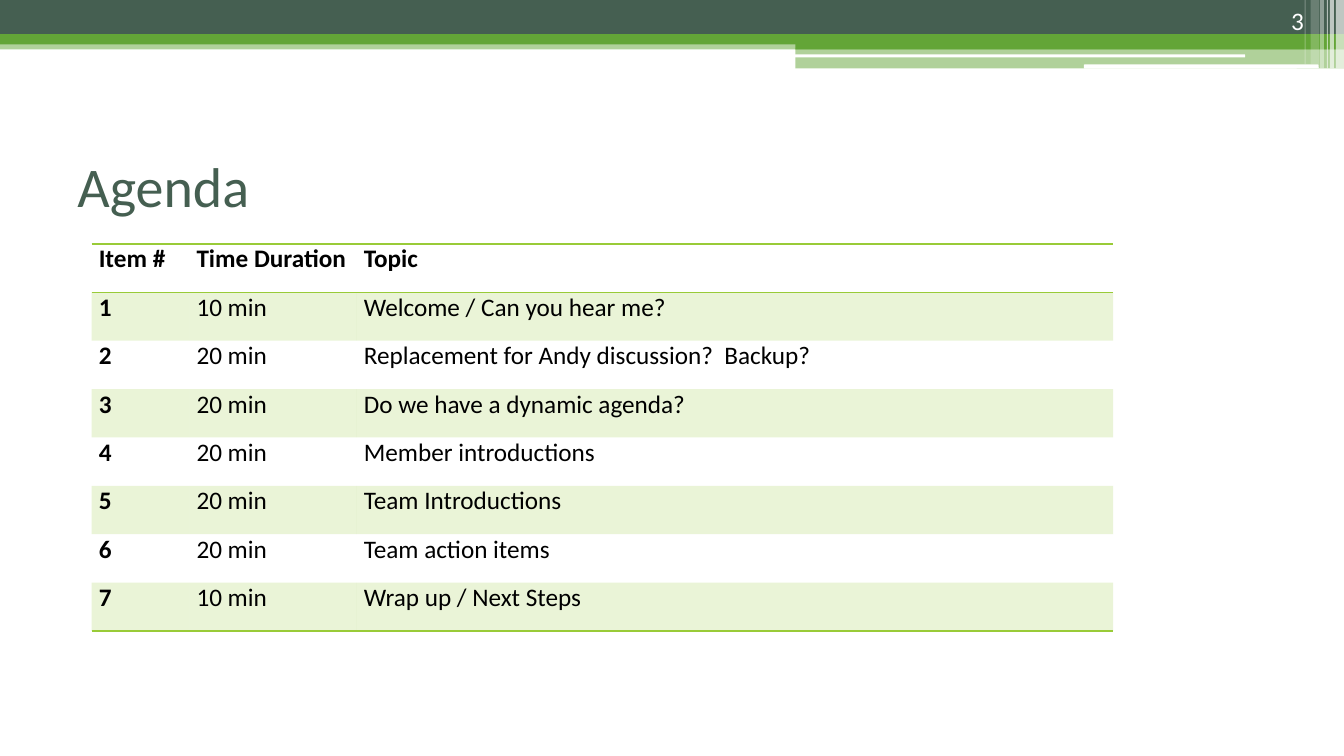
import dataclasses

import lxml.etree
import pptx
import pptx.dml.color
import pptx.enum.shapes
import pptx.enum.text
import pptx.oxml.ns
import pptx.util

Inches = pptx.util.Inches
Align = pptx.enum.text.PP_ALIGN
Anchor = pptx.enum.text.MSO_ANCHOR
Preset = pptx.enum.shapes.MSO_SHAPE
qn = pptx.oxml.ns.qn


@dataclasses.dataclass(frozen=True)
class Theme:
    font: str = "Calibri"
    title_size: int = 40
    body_size: int = 18
    dark: str = "455F51"
    green: str = "63A537"
    lime: str = "99CB38"
    white: str = "FFFFFF"
    black: str = "000000"


NO_TABLE_STYLE = "{2D5ABB26-0587-4C30-8999-92F81FD0307C}"
COLUMN_WIDTHS = (0.97, 1.66, 7.5)
ROW_HEIGHT = 0.48
AGENDA = (
    ("Item #", "Time Duration", "Topic"),
    ("1", "10 min", "Welcome / Can you hear me?"),
    ("2", "20 min", "Replacement for Andy discussion?  Backup?"),
    ("3", "20 min", "Do we have a dynamic agenda?"),
    ("4", "20 min", "Member introductions"),
    ("5", "20 min", "Team Introductions"),
    ("6", "20 min", "Team action items"),
    ("7", "10 min", "Wrap up / Next Steps"),
)
# left, width, height, opacity in percent
EDGE_STRIPES = (
    (13.25, 0.08, 0.68, 65),
    (13.19, 0.04, 0.68, 65),
    (13.16, 0.01, 0.68, 60),
    (13.09, 0.04, 0.68, 40),
    (13, 0.08, 0.64, 20),
    (12.94, 0.01, 0.64, 30),
)


class SlideBuilder:
    def __init__(self, slide, theme):
        self.slide = slide
        self.theme = theme

    def fill(self, target, properties, color, opacity=100):
        """Fill a shape or cell; properties is its XML element that holds the fill."""
        target.fill.solid()
        target.fill.fore_color.rgb = pptx.dml.color.RGBColor.from_string(color)
        if opacity < 100:
            color_element = properties.find(qn("a:solidFill"))[0]
            alpha = lxml.etree.SubElement(color_element, qn("a:alpha"))
            alpha.set("val", str(opacity * 1000))

    def bar(self, left, top, width, height, color, opacity=100, preset=Preset.RECTANGLE):
        shape = self.slide.shapes.add_shape(
            preset, Inches(left), Inches(top), Inches(width), Inches(height))
        shape.shadow.inherit = False
        shape.line.fill.background()
        self.fill(shape, shape._element.spPr, color, opacity)

    def set_text(self, text_frame, text, size, color, bold=False, align=Align.LEFT):
        text_frame.text = text
        paragraph = text_frame.paragraphs[0]
        paragraph.alignment = align
        for run in paragraph.runs:
            run.font.name = self.theme.font
            run.font.size = pptx.util.Pt(size)
            run.font.bold = bold
            run.font.color.rgb = pptx.dml.color.RGBColor.from_string(color)

    def text(self, left, top, width, height, text, size, color, anchor, align=Align.LEFT):
        box = self.slide.shapes.add_textbox(
            Inches(left), Inches(top), Inches(width), Inches(height))
        box.text_frame.word_wrap = True
        box.text_frame.vertical_anchor = anchor
        self.set_text(box.text_frame, text, size, color, align=align)

    def border(self, cell, sides):
        """Draw 1 pt lines on the given sides, named in schema order (lnT, lnB)."""
        for index, side in enumerate(sides):
            line = lxml.etree.Element(qn(f"a:{side}"), w=str(pptx.util.Pt(1)))
            solid = lxml.etree.SubElement(line, qn("a:solidFill"))
            lxml.etree.SubElement(solid, qn("a:srgbClr"), val=self.theme.lime)
            cell._tc.get_or_add_tcPr().insert(index, line)

    def table(self, left, top, rows, widths, row_height):
        frame = self.slide.shapes.add_table(
            len(rows), len(widths), Inches(left), Inches(top),
            Inches(sum(widths)), Inches(row_height * len(rows)))
        table = frame.table
        table._tbl.tblPr.find(qn("a:tableStyleId")).text = NO_TABLE_STYLE
        for column, width in zip(table.columns, widths):
            column.width = Inches(width)
        for row_index, values in enumerate(rows):
            table.rows[row_index].height = Inches(row_height)
            for column_index, value in enumerate(values):
                cell = table.cell(row_index, column_index)
                cell.margin_left = cell.margin_right = Inches(0.07)
                cell.margin_top = cell.margin_bottom = 0
                self.set_text(cell.text_frame, value, self.theme.body_size, self.theme.black,
                              bold=row_index == 0 or column_index == 0)
                if row_index % 2:
                    self.fill(cell, cell._tc.get_or_add_tcPr(), self.theme.lime, 20)
                else:
                    cell.fill.background()
                if row_index == 0:
                    self.border(cell, ("lnT", "lnB"))
                elif row_index == len(rows) - 1:
                    self.border(cell, ("lnB",))


def main():
    presentation = pptx.Presentation()
    presentation.slide_width = Inches(13.33)
    presentation.slide_height = Inches(7.5)
    theme = Theme()
    builder = SlideBuilder(
        presentation.slides.add_slide(presentation.slide_layouts[6]), theme)

    builder.bar(0, 0.4, 13.33, 0.09, theme.green, 50)
    builder.bar(0, 0, 13.33, 0.34, theme.dark)
    builder.bar(0, 0.34, 13.33, 0.1, theme.green)
    builder.bar(7.89, 0.39, 5.44, 0.1, theme.green)
    builder.bar(7.89, 0.48, 5.44, 0.2, theme.green, 50)
    builder.bar(7.88, 0.54, 4.47, 0.03, theme.white, preset=Preset.ROUNDED_RECTANGLE)
    builder.bar(10.75, 0.64, 2.33, 0.04, theme.white, preset=Preset.ROUNDED_RECTANGLE)
    for left, width, height, opacity in EDGE_STRIPES:
        builder.bar(left, 0, width, height, theme.white, opacity)

    builder.text(0.67, 1.25, 12, 1.17, "Agenda", theme.title_size, theme.dark, Anchor.MIDDLE)
    builder.table(0.91, 2.42, AGENDA, COLUMN_WIDTHS, ROW_HEIGHT)
    builder.text(11.92, 0, 1.11, 0.4, "3", theme.body_size, theme.white,
                 Anchor.BOTTOM, Align.RIGHT)
    presentation.save("out.pptx")


if __name__ == "__main__":
    main()
